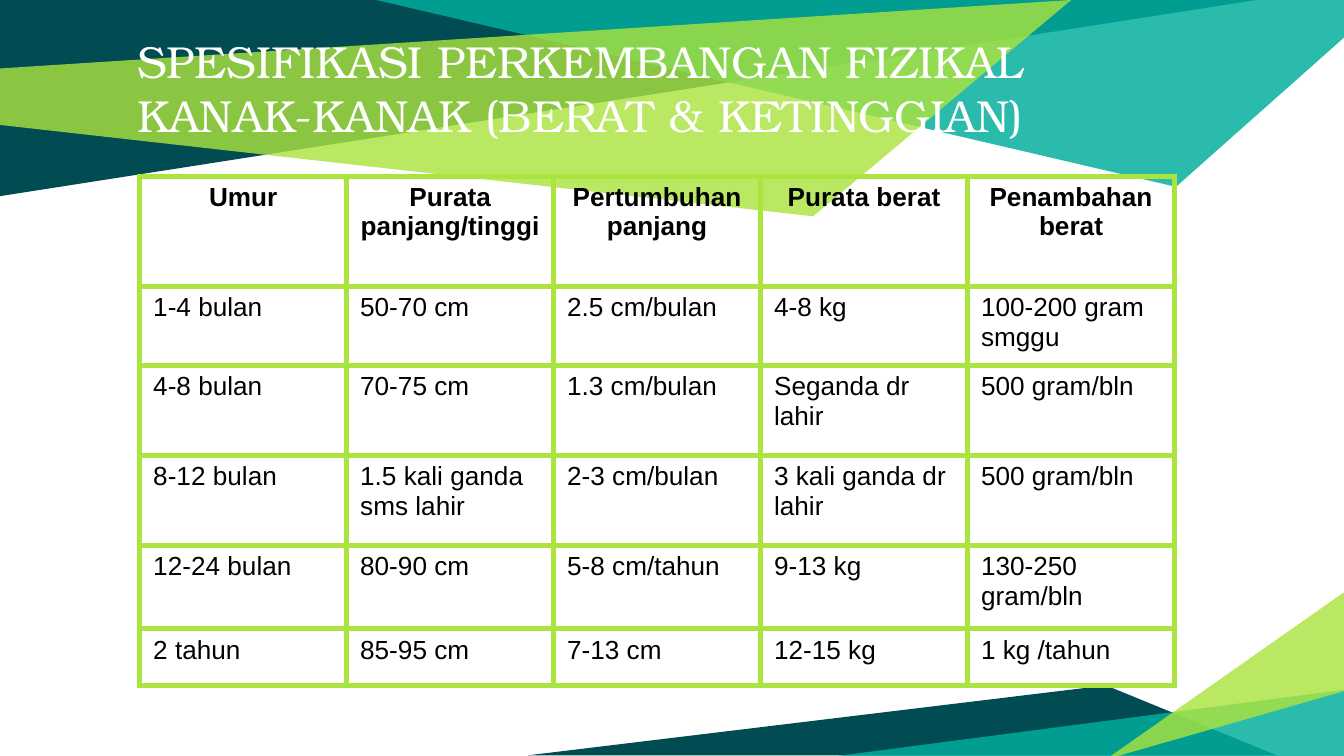
from lxml import etree
from pptx import Presentation
from pptx.dml.color import RGBColor
from pptx.enum import text
from pptx.oxml import ns
from pptx.util import Inches, Pt

DARK = RGBColor(0x00, 0x4C, 0x52)
TEAL = RGBColor(0x00, 0xAE, 0x9D)
LIME = RGBColor(0xAB, 0xE3, 0x3F)
WHITE = RGBColor(0xFF, 0xFF, 0xFF)
BLACK = RGBColor(0x00, 0x00, 0x00)

TITLE = "SPESIFIKASI PERKEMBANGAN FIZIKAL KANAK-KANAK (BERAT & KETINGGIAN)"
ROWS = [
    ("Umur", "Purata panjang/tinggi", "Pertumbuhan panjang",
     "Purata berat", "Penambahan berat"),
    ("1-4 bulan", "50-70 cm", "2.5 cm/bulan", "4-8 kg", "100-200 gram smggu"),
    ("4-8 bulan", "70-75 cm", "1.3 cm/bulan", "Seganda dr lahir", "500 gram/bln"),
    ("8-12 bulan", "1.5 kali ganda sms lahir", "2-3 cm/bulan",
     "3 kali ganda dr lahir", "500 gram/bln"),
    ("12-24 bulan", "80-90 cm", "5-8 cm/tahun", "9-13 kg", "130-250 gram/bln"),
    ("2 tahun", "85-95 cm", "7-13 cm", "12-15 kg", "1 kg /tahun"),
]
HEIGHTS = [0.82, 0.59, 0.67, 0.67, 0.62, 0.42]
WIDTH = 1.54

# Colour, opacity in percent, corner points in inches
SHARDS = [
    (DARK, 100, [(0, 0), (0, 1.46), (9.35, 0)]),
    (TEAL, 83, [(2.8, 0), (8.75, 1.39), (10, 0.28), (10, 0)]),
    (LIME, 81, [(-0.01, 0.51), (0, 0.93), (6.05, 1.61), (7.97, 0)]),
    (DARK, 100, [(3.93, 5.62), (9.5, 5.62), (8.23, 5.1)]),
    (TEAL, 83, [(10.02, 5.13), (10.02, 5.65), (6.04, 5.65)]),
    (LIME, 81, [(10.01, 5.14), (10.01, 4.4), (8.23, 5.65)]),
]


def add_shard(slide, color, alpha, points):
    start, *rest = [(Inches(x), Inches(y)) for x, y in points]
    pen = slide.shapes.build_freeform(*start)
    pen.add_line_segments(rest, close=True)
    shard = pen.convert_to_shape()
    shard.shadow.inherit = False
    shard.line.fill.background()
    shard.fill.solid()
    shard.fill.fore_color.rgb = color
    if alpha < 100:
        rgb = shard._element.spPr.find(".//" + ns.qn("a:srgbClr"))
        etree.SubElement(rgb, ns.qn("a:alpha"), val=str(alpha * 1000))


def set_border(cell, color, width):
    props = cell._tc.get_or_add_tcPr()
    for i, side in enumerate(("lnL", "lnR", "lnT", "lnB")):
        line = etree.Element(ns.qn("a:" + side), w=str(Pt(width)))
        fill = etree.SubElement(line, ns.qn("a:solidFill"))
        etree.SubElement(fill, ns.qn("a:srgbClr"), val=str(color))
        props.insert(i, line)


def set_font(par, name, size, color, bold=False):
    font = par.font
    font.name, font.size, font.bold = name, Pt(size), bold
    font.color.rgb = color


def add_title(slide):
    title = slide.shapes.title
    title.left, title.top = Inches(0.92), Inches(0.15)
    title.width, title.height = Inches(8.06), Inches(0.94)
    frame = title.text_frame
    frame.text = TITLE
    frame.word_wrap = True
    frame.auto_size = text.MSO_AUTO_SIZE.NONE
    frame.vertical_anchor = text.MSO_ANCHOR.TOP
    frame.margin_left = frame.margin_right = Inches(0.1)
    frame.margin_top = frame.margin_bottom = Inches(0.1)
    par = frame.paragraphs[0]
    par.alignment = text.PP_ALIGN.LEFT
    par.line_spacing = 1.0
    set_font(par, "TeX Gyre Bonum", 24, WHITE)
    slide.shapes._spTree.append(title._element)  # bring in front of the shards


def add_growth(slide):
    cols = len(ROWS[0])
    table = slide.shapes.add_table(
        len(ROWS), cols, Inches(1.04), Inches(1.31),
        Inches(WIDTH * cols), Inches(sum(HEIGHTS))).table
    table.first_row = table.horz_banding = False
    for col in table.columns:
        col.width = Inches(WIDTH)
    for r, (values, height) in enumerate(zip(ROWS, HEIGHTS)):
        table.rows[r].height = Inches(height)
        for c, value in enumerate(values):
            cell = table.cell(r, c)
            cell.text = value
            cell.fill.background()
            set_border(cell, LIME, 3)
            par = cell.text_frame.paragraphs[0]
            par.alignment = text.PP_ALIGN.LEFT if r else text.PP_ALIGN.CENTER
            set_font(par, "Arial", 14, BLACK, bold=r == 0)


def main():
    deck = Presentation()
    deck.slide_width = Inches(10)
    deck.slide_height = deck.slide_width * 9 // 16
    slide = deck.slides.add_slide(deck.slide_layouts[5])
    for shard in SHARDS:
        add_shard(slide, *shard)
    add_title(slide)
    add_growth(slide)
    deck.save("out.pptx")


if __name__ == "__main__":
    main()
